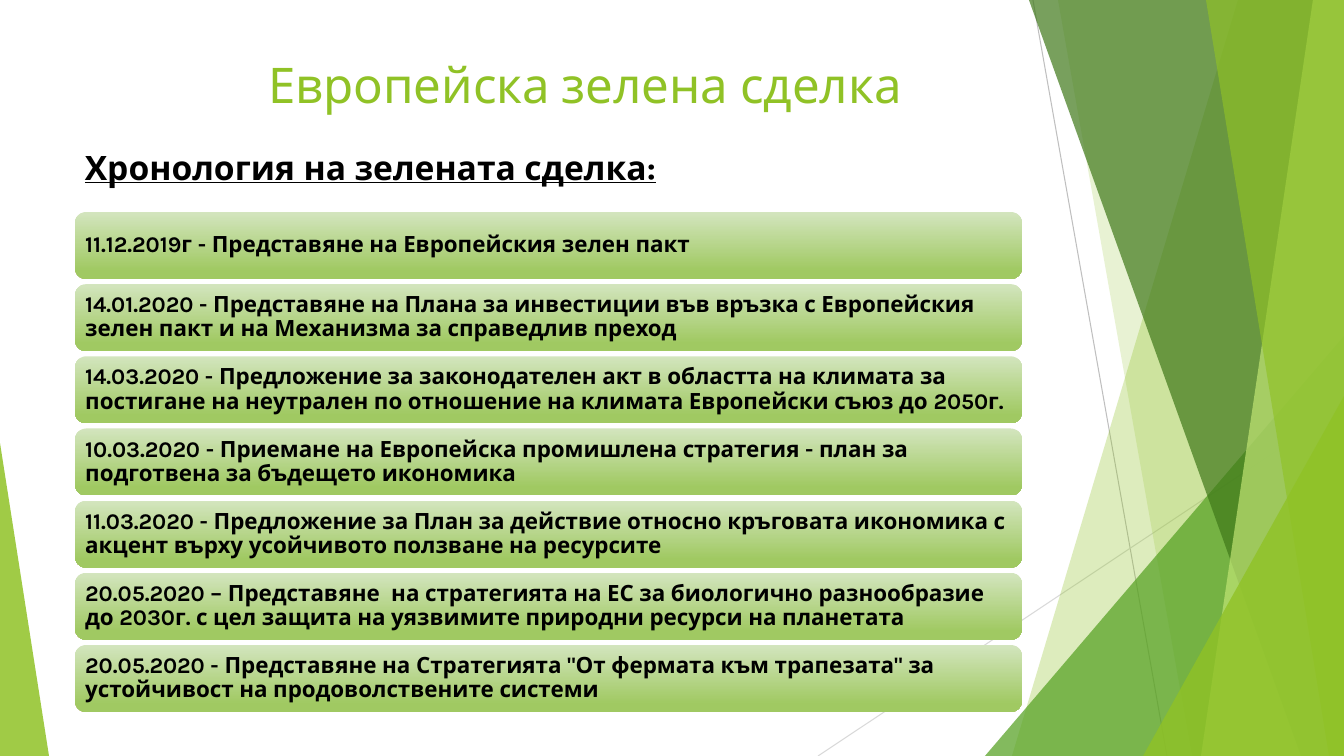
from lxml.etree import SubElement
from pptx import Presentation
from pptx.dml.color import RGBColor
from pptx.enum.shapes import MSO_CONNECTOR, MSO_SHAPE
from pptx.enum.text import MSO_ANCHOR, PP_ALIGN
from pptx.oxml.ns import qn
from pptx.util import Pt

TITLE = "Европейска зелена сделка"
HEADING = "Хронология на зелената сделка:"
EVENTS = [
    "11.12.2019г - Представяне на Европейския зелен пакт",
    "14.01.2020 - Представяне на Плана за инвестиции във връзка с Европейския зелен пакт и на Механизма за справедлив преход",
    "14.03.2020 - Предложение за законодателен акт в областта на климата за постигане на неутрален по отношение на климата Европейски съюз до 2050г.",
    "10.03.2020 - Приемане на Европейска промишлена стратегия - план за подготвена за бъдещето икономика",
    "11.03.2020 - Предложение за План за действие относно кръговата икономика с акцент върху усойчивото ползване на ресурсите",
    "20.05.2020 – Представяне  на стратегията на ЕС за биологично разнообразие до 2030г. с цел защита на уязвимите природни ресурси на планетата",
    "20.05.2020 - Представяне на Стратегията \"От фермата към трапезата\" за устойчивост на продоволствените системи",
]

THEME = {
    "font": "Karla",
    "title_size": 35.1,
    "heading_size": 24,
    "event_size": 16,
    "text": "000000",
    "green": "90C226",
    "leaf": "54A021",
    "forest": "3F7819",
    "lime": "C0E474",
    "card_top": "D3E5BE",
    "card_bottom": "A0C962",
    "steep_line": "BFBFBF",
    "flat_line": "D9D9D9",
}

WIDTH, HEIGHT = 1344, 756
EMU_PER_PX = 9144000 / 1008

LINES = [
    ((1033, 0), (1167, HEIGHT), "steep_line"),
    ((WIDTH, 406), (818, HEIGHT), "flat_line"),
]
DECORATIONS = [
    ("band", (1238, 1012), "green", 30),
    ("band", (1058, 1192), "green", 20),
    ("triangle", (985, 336, 359, 1), "leaf", 72),
    ("band", (1029, 1301), "forest", 70),
    ("band", (1313, 1201), "lime", 70),
    ("band", (1206, 1329), "green", 65),
    ("triangle", (1143, 396, 201, 1), "green", 80),
    ("triangle", (0, 443, 49, 0), "green", 85),
]

CARD_LEFT, CARD_WIDTH, CARD_HEIGHT, CARD_INSET = 75, 947, 67, 7
FIRST_CARD_TOP, LAST_CARD_TOP = 212, 645


def px(value):
    return round(value * EMU_PER_PX)


def color(name):
    return RGBColor.from_string(THEME[name])


def add_line(slide, start, end, line_color):
    line = slide.shapes.add_connector(
        MSO_CONNECTOR.STRAIGHT, *map(px, start + end))
    line.line.color.rgb = color(line_color)
    line.line.width = Pt(0.75)
    SubElement(line._element.spPr, qn("a:effectLst"))


def make_plain(shape):
    shape.shadow.inherit = False
    shape.line.fill.background()


def build_band(slide, top_left, bottom_left):
    builder = slide.shapes.build_freeform(px(top_left), 0)
    corners = [(WIDTH, 0), (WIDTH, HEIGHT), (bottom_left, HEIGHT)]
    builder.add_line_segments([(px(x), px(y)) for x, y in corners])
    return builder.convert_to_shape()


def build_triangle(slide, left, top, width, apex):
    shape = slide.shapes.add_shape(
        MSO_SHAPE.ISOSCELES_TRIANGLE,
        *map(px, (left, top, width, HEIGHT - top)))
    shape.adjustments[0] = apex
    return shape


def add_decoration(slide, kind, geometry, fill_color, opacity):
    build = build_band if kind == "band" else build_triangle
    shape = build(slide, *geometry)
    make_plain(shape)
    shape.fill.solid()
    shape.fill.fore_color.rgb = color(fill_color)
    fill = shape._element.spPr.find(qn("a:solidFill"))
    SubElement(fill[0], qn("a:alpha")).set("val", str(opacity * 1000))


def write(shape, text, size, text_color, align=PP_ALIGN.LEFT, bold=False, underline=False):
    shape.text_frame.word_wrap = True
    paragraph = shape.text_frame.paragraphs[0]
    paragraph.alignment = align
    run = paragraph.add_run()
    run.text = text
    run.font.name = THEME["font"]
    run.font.size = Pt(THEME[size])
    run.font.color.rgb = color(text_color)
    run.font.bold = bold
    run.font.underline = underline
    return paragraph


def add_card(slide, top, text):
    card = slide.shapes.add_shape(
        MSO_SHAPE.ROUNDED_RECTANGLE,
        *map(px, (CARD_LEFT, top, CARD_WIDTH, CARD_HEIGHT)))
    make_plain(card)
    card.fill.gradient()
    card.fill.gradient_angle = 270
    stops = [(0, "card_top"), (0.88, "card_bottom")]
    for stop, (position, stop_color) in zip(card.fill.gradient_stops, stops):
        stop.position = position
        stop.color.rgb = color(stop_color)
    frame = card.text_frame
    frame.vertical_anchor = MSO_ANCHOR.MIDDLE
    frame.margin_left = frame.margin_right = px(CARD_INSET)
    frame.margin_top = frame.margin_bottom = px(CARD_INSET)
    paragraph = write(card, text, "event_size", "text", bold=True)
    paragraph.line_spacing = 0.9


def main():
    presentation = Presentation()
    presentation.slide_width = px(WIDTH)
    presentation.slide_height = px(HEIGHT)
    slide = presentation.slides.add_slide(presentation.slide_layouts[6])

    for line in LINES:
        add_line(slide, *line)
    for decoration in DECORATIONS:
        add_decoration(slide, *decoration)

    heading = slide.shapes.add_textbox(*map(px, (75, 142, 908, 70)))
    write(heading, HEADING, "heading_size", "text", bold=True, underline=True)

    pitch = (LAST_CARD_TOP - FIRST_CARD_TOP) / (len(EVENTS) - 1)
    for index, event in enumerate(EVENTS):
        add_card(slide, FIRST_CARD_TOP + index * pitch, event)

    title = slide.shapes.add_textbox(*map(px, (131, 49, 908, 70)))
    write(title, TITLE, "title_size", "green", align=PP_ALIGN.CENTER)

    presentation.save("out.pptx")


if __name__ == "__main__":
    main()
